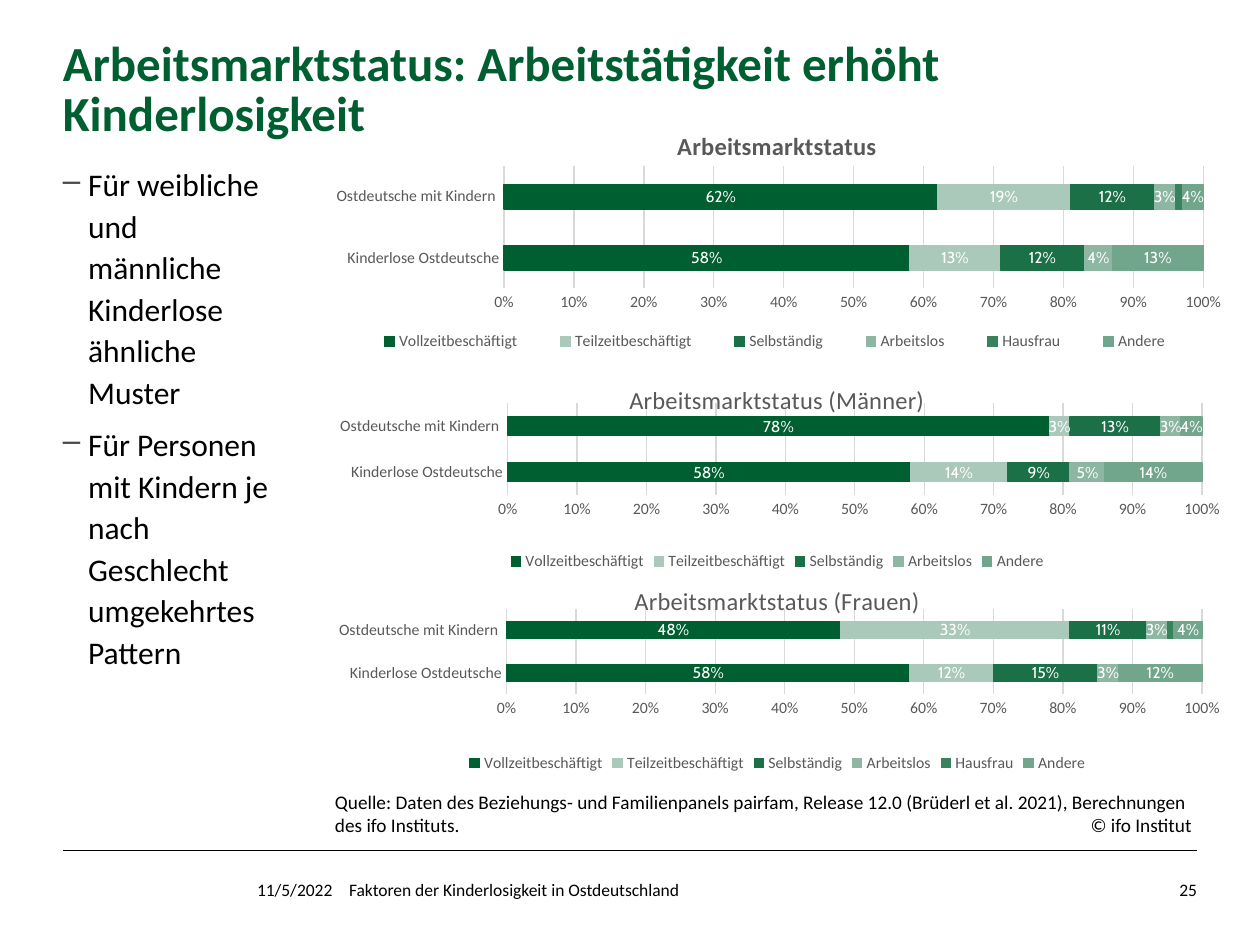
from dataclasses import dataclass, field
from typing import Optional

from lxml.etree import SubElement
from pptx import Presentation
from pptx.chart.chart import Chart
from pptx.chart.data import CategoryChartData
from pptx.dml.color import RGBColor
from pptx.enum.chart import XL_CHART_TYPE, XL_LEGEND_POSITION, XL_TICK_MARK
from pptx.enum.shapes import MSO_CONNECTOR
from pptx.enum.text import MSO_ANCHOR, PP_ALIGN
from pptx.oxml.ns import qn
from pptx.util import Inches, Pt

Box = tuple[float, float, float, float]


@dataclass(frozen=True)
class Theme:
    font: str = "Calibri"
    label_font: str = "Cabin"
    green: str = "005F30"
    text: str = "000000"
    muted: str = "595959"
    bullet: str = "4A4A49"
    grid: str = "D9D9D9"
    white: str = "FFFFFF"
    title_size: float = 28
    body_size: float = 18
    source_size: float = 11
    footer_size: float = 10
    chart_title_size: float = 14
    chart_size: float = 9
    line_width: float = 0.75
    series: dict[str, str] = field(default_factory=lambda: {
        "Vollzeitbeschäftigt": "005F30",
        "Teilzeitbeschäftigt": "AAC9BA",
        "Selbständig": "1C7047",
        "Arbeitslos": "8DB7A3",
        "Hausfrau": "38825E",
        "Andere": "71A68C",
    })


@dataclass(frozen=True)
class StatusChart:
    title: str
    top: float
    height: float
    title_left: float
    plot: Box
    values: dict[str, tuple[float, float]]
    bold: bool = False
    legend: Optional[Box] = None


THEME = Theme()
CHART_LEFT, CHART_WIDTH = 2.5, 7.34
TITLE_TOP = 0.08
CATEGORIES = ("Kinderlose Ostdeutsche", "Ostdeutsche mit Kindern ")
CHARTS = (
    StatusChart("Arbeitsmarktstatus", 0.91, 2.01, 2.84, (1.5, 0.41, 5.55, 0.97), {
        "Vollzeitbeschäftigt": (0.58, 0.62),
        "Teilzeitbeschäftigt": (0.13, 0.19),
        "Selbständig": (0.12, 0.12),
        "Arbeitslos": (0.04, 0.03),
        "Hausfrau": (0, 0.01),
        "Andere": (0.13, 0.04),
    }, bold=True, legend=(0.25, 1.7, 6.8, 0.2)),
    StatusChart("Arbeitsmarktstatus (Männer)", 2.92, 1.65, 2.46, (1.53, 0.28, 5.51, 0.73), {
        "Vollzeitbeschäftigt": (0.58, 0.78),
        "Teilzeitbeschäftigt": (0.14, 0.03),
        "Selbständig": (0.09, 0.13),
        "Arbeitslos": (0.05, 0.03),
        "Andere": (0.14, 0.04),
    }),
    StatusChart("Arbeitsmarktstatus (Frauen)", 4.52, 1.65, 2.5, (1.52, 0.31, 5.52, 0.68), {
        "Vollzeitbeschäftigt": (0.58, 0.48),
        "Teilzeitbeschäftigt": (0.12, 0.33),
        "Selbständig": (0.15, 0.11),
        "Arbeitslos": (0.03, 0.03),
        "Hausfrau": (0, 0.01),
        "Andere": (0.12, 0.04),
    }),
)
BULLETS = (
    "Für weibliche und männliche Kinderlose ähnliche Muster",
    "Für Personen mit Kindern je nach Geschlecht umgekehrtes Pattern",
)
SOURCE = ("Quelle: Daten des Beziehungs- und Familienpanels pairfam, Release 12.0 "
          "(Brüderl et al. 2021), Berechnungen des ifo Instituts.\t© ifo Institut")


def style_font(font, size: float, color: str, name: str = THEME.font, bold: bool = False) -> None:
    font.size, font.name, font.bold = Pt(size), name, bold
    font.color.rgb = RGBColor.from_string(color)


def add_text(slide, box: Box, texts: tuple[str, ...], size: float, color: str = THEME.text,
             bold: bool = False, insets: Box = (0, 0, 0, 0)):
    tf = slide.shapes.add_textbox(*map(Inches, box)).text_frame
    tf.word_wrap = True
    tf.margin_left, tf.margin_top, tf.margin_right, tf.margin_bottom = map(Inches, insets)
    for i, text in enumerate(texts):
        p = tf.add_paragraph() if i else tf.paragraphs[0]
        r = p.add_run()
        r.text = text
        style_font(r.font, size, color, bold=bold)
    return tf


def add_bullet(p) -> None:
    pPr = p._p.get_or_add_pPr()
    pPr.set("marL", str(Inches(0.2)))
    pPr.set("indent", str(-Inches(0.2)))
    SubElement(SubElement(pPr, qn("a:buClr")), qn("a:srgbClr"), val=THEME.bullet)
    SubElement(pPr, qn("a:buChar"), char="–")
    p.line_spacing = 1.1
    p.space_after = Pt(6)


def add_right_tab(p, position: float) -> None:
    tabs = SubElement(p._p.get_or_add_pPr(), qn("a:tabLst"))
    SubElement(tabs, qn("a:tab"), pos=str(Inches(position)), algn="r")


def place_part(part, index: int, chart_height: float, box: tuple[float, ...], inner: bool = False) -> None:
    for old in part.findall(qn("c:layout")):
        part.remove(old)
    layout = SubElement(part, qn("c:layout"))
    manual = SubElement(layout, qn("c:manualLayout"))
    if inner:
        SubElement(manual, qn("c:layoutTarget"), val="inner")
    for mode in ("xMode", "yMode"):
        SubElement(manual, qn(f"c:{mode}"), val="edge")
    for key, length, total in zip("xywh", box, (CHART_WIDTH, chart_height) * 2):
        SubElement(manual, qn(f"c:{key}"), val=f"{length / total:.4f}")
    part.insert(index, layout)


def style_line(line, color: str) -> None:
    line.color.rgb = RGBColor.from_string(color)
    line.width = Pt(THEME.line_width)


def style_axes(chart: Chart) -> None:
    cat, val = chart.category_axis, chart.value_axis
    for axis in (cat, val):
        axis.major_tick_mark = axis.minor_tick_mark = XL_TICK_MARK.NONE
        style_font(axis.tick_labels.font, THEME.chart_size, THEME.muted)
    cat.has_major_gridlines = False
    style_line(cat.format.line, THEME.grid)
    val.minimum_scale, val.maximum_scale, val.major_unit = 0, 1, 0.1
    val.has_major_gridlines = True
    style_line(val.major_gridlines.format.line, THEME.grid)
    val.format.line.fill.background()
    val.tick_labels.number_format = "0%"
    val.tick_labels.number_format_is_linked = False


def style_series(chart: Chart) -> None:
    for s in chart.plots[0].series:
        color = THEME.series[s.name]
        s.format.fill.solid()
        s.format.fill.fore_color.rgb = RGBColor.from_string(color)
        style_line(s.format.line, color)
        if s.name != "Hausfrau":
            labels = s.data_labels
            labels.show_value = True
            labels.number_format, labels.number_format_is_linked = "0%", False
            style_font(labels.font, THEME.chart_size, THEME.white, THEME.label_font)


def add_status_chart(slide, item: StatusChart) -> None:
    data = CategoryChartData(number_format="0%")
    data.categories = CATEGORIES
    for name, values in item.values.items():
        data.add_series(name, values)
    box = map(Inches, (CHART_LEFT, item.top, CHART_WIDTH, item.height))
    chart = slide.shapes.add_chart(XL_CHART_TYPE.BAR_STACKED, *box, data).chart
    style_font(chart.font, 10, THEME.text)
    chart.has_title = True
    r = chart.chart_title.text_frame.paragraphs[0].add_run()
    r.text = item.title
    style_font(r.font, THEME.chart_title_size, THEME.muted, bold=item.bold)
    place_part(chart.chart_title._element, 1, item.height, (item.title_left, TITLE_TOP))
    plot = chart.plots[0]
    plot.gap_width, plot.overlap, plot.vary_by_categories = 150, 100, False
    place_part(chart._chartSpace.chart.plotArea, 0, item.height, item.plot, inner=True)
    style_axes(chart)
    style_series(chart)
    chart.has_legend = True
    chart.legend.position = XL_LEGEND_POSITION.BOTTOM
    chart.legend.include_in_layout = False
    style_font(chart.legend.font, THEME.chart_size, THEME.muted)
    if item.legend:
        place_part(chart.legend._element, 1, item.height, item.legend)


def main() -> None:
    prs = Presentation()
    prs.slide_width, prs.slide_height = Inches(10), Inches(7.5)
    slide = prs.slides.add_slide(prs.slide_layouts[6])

    rule = slide.shapes.add_connector(MSO_CONNECTOR.STRAIGHT, *map(Inches, (0.5, 6.75, 9.5, 6.75)))
    rule.line.color.rgb = RGBColor.from_string(THEME.text)
    rule.line.width = Pt(0.5)
    SubElement(rule._element.spPr, qn("a:effectLst"))

    title = add_text(slide, (0.5, 0.41, 9, 0.71),
                     ("Arbeitsmarktstatus: Arbeitstätigkeit erhöht Kinderlosigkeit",),
                     THEME.title_size, THEME.green, bold=True)
    title.vertical_anchor = MSO_ANCHOR.BOTTOM
    title.paragraphs[0].line_spacing = 0.85

    body = add_text(slide, (0.5, 1.28, 2.16, 5.69), BULLETS, THEME.body_size, insets=(0, 0, 0.47, 0))
    for p in body.paragraphs:
        add_bullet(p)

    add_text(slide, (2.04, 6.98, 0.63, 0.16), ("11/5/2022",), THEME.footer_size)
    add_text(slide, (2.77, 6.98, 4.42, 0.16),
             ("Faktoren der Kinderlosigkeit in Ostdeutschland",), THEME.footer_size)
    number = add_text(slide, (9.02, 6.98, 0.48, 0.16), ("25",), THEME.footer_size)
    number.paragraphs[0].alignment = PP_ALIGN.RIGHT

    source = add_text(slide, (2.56, 6.22, 7.09, 0.47), (SOURCE,), THEME.source_size,
                      insets=(0.1, 0.05, 0.1, 0.05))
    add_right_tab(source.paragraphs[0], 6.8)

    for item in CHARTS:
        add_status_chart(slide, item)
    prs.save("out.pptx")


if __name__ == "__main__":
    main()
